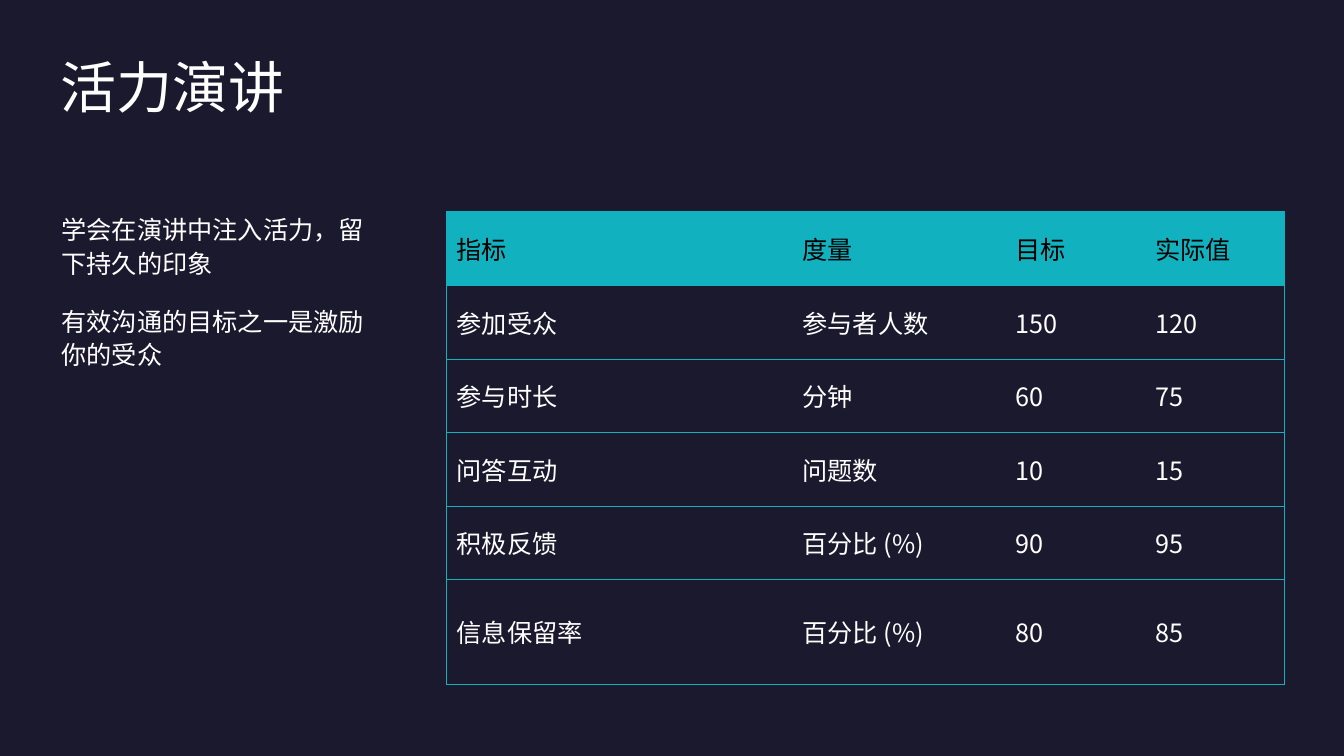
"""Build a dark slide with a title, two remarks and a table of speech metrics."""
from typing import NamedTuple

import pptx
import pptx.dml.color
import pptx.enum.text
import pptx.oxml
import pptx.oxml.ns
import pptx.util
from pptx.util import Inches

HUES = {"back": "1B192E", "teal": "12B1BF", "white": "FFFFFF", "black": "000000"}
FONT = "Noto Sans CJK SC"
NS = pptx.oxml.ns.nsdecls("a")
COLS = (3.43, 2.11, 1.39, 1.38)
TALL = (0.73,) * 5 + (1.04,)


class Box(NamedTuple):
    left: float
    top: float
    width: float
    height: float
    lines: tuple[str, ...]
    size: float
    lead: float
    pads: tuple[float, float, float, float] = (0, 0, 0, 0)
    above: float = 0
    below: float = 0


class Row(NamedTuple):
    name: str
    unit: str
    goal: str
    real: str


BOXES = (
    Box(0.6, 0.6, 12.13, 1.35, ("活力演讲",), 40, 0.9),
    Box(0.61, 2.1, 3.19, 4.7,
        ("学会在演讲中注入活力，留下持久的印象", "有效沟通的目标之一是激励你的受众"),
        18, 1.1, (0, 0, 0.1, 0.05), 10, 8),
)
ROWS = (
    Row("指标", "度量", "目标", "实际值"),
    Row("参加受众", "参与者人数", "150", "120"),
    Row("参与时长", "分钟", "60", "75"),
    Row("问答互动", "问题数", "10", "15"),
    Row("积极反馈", "百分比 (%)", "90", "95"),
    Row("信息保留率", "百分比 (%)", "80", "85"),
)


def get_hue(name: str) -> pptx.dml.color.RGBColor:
    return pptx.dml.color.RGBColor.from_string(HUES[name])


def put_text(para, text: str, *, size: float = 18, hue: str = "white",
             lead: float = 1, above: float = 0, below: float = 0) -> None:
    para.line_spacing = lead
    para.space_before = pptx.util.Pt(above)
    para.space_after = pptx.util.Pt(below)
    run = para.add_run()
    run.text = text
    run.font.size = pptx.util.Pt(size)
    run.font.bold = False
    run.font.color.rgb = get_hue(hue)
    run.font.name = FONT
    east = pptx.oxml.parse_xml(f'<a:ea {NS} typeface="{FONT}"/>')
    run.font._element.append(east)


def draw_box(slide, box: Box) -> None:
    shape = slide.shapes.add_textbox(*map(Inches, box[:4]))
    frame = shape.text_frame
    frame.word_wrap = True
    (frame.margin_left, frame.margin_top,
     frame.margin_right, frame.margin_bottom) = map(Inches, box.pads)
    for i, line in enumerate(box.lines):
        para = frame.add_paragraph() if i else frame.paragraphs[0]
        put_text(para, line, size=box.size, lead=box.lead,
                 above=box.above, below=box.below)


def set_rules(cell, sides: str) -> None:
    props = cell._tc.get_or_add_tcPr()
    for side in "LRTB":
        fill = (f'<a:solidFill><a:srgbClr val="{HUES["teal"]}"/></a:solidFill>'
                if side in sides else "<a:noFill/>")
        props.append(pptx.oxml.parse_xml(
            f'<a:ln{side} {NS} w="6350">{fill}</a:ln{side}>'))


def draw_table(slide, left: float, top: float) -> None:
    frame = slide.shapes.add_table(
        len(ROWS), len(COLS), Inches(left), Inches(top),
        Inches(sum(COLS)), Inches(sum(TALL)))
    table = frame.table
    table.horz_banding = False
    for col, width in zip(table.columns, COLS):
        col.width = Inches(width)
    for r, (row, tall) in enumerate(zip(ROWS, TALL)):
        table.rows[r].height = Inches(tall)
        for c, text in enumerate(row):
            cell = table.cell(r, c)
            cell.vertical_anchor = pptx.enum.text.MSO_ANCHOR.MIDDLE
            ends = ("L" if c == 0 else "") + ("R" if c == len(COLS) - 1 else "")
            set_rules(cell, "TB" + ends)
            if r == 0:
                cell.fill.solid()
                cell.fill.fore_color.rgb = get_hue("teal")
            else:
                cell.fill.background()
            put_text(cell.text_frame.paragraphs[0], text,
                     hue="white" if r else "black")


def main() -> None:
    deck = pptx.Presentation()
    deck.slide_width = Inches(13.33)
    deck.slide_height = Inches(7.5)
    slide = deck.slides.add_slide(deck.slide_layouts[6])
    slide.background.fill.solid()
    slide.background.fill.fore_color.rgb = get_hue("back")
    for box in BOXES:
        draw_box(slide, box)
    draw_table(slide, 4.43, 2.1)
    deck.save("out.pptx")


if __name__ == "__main__":
    main()
